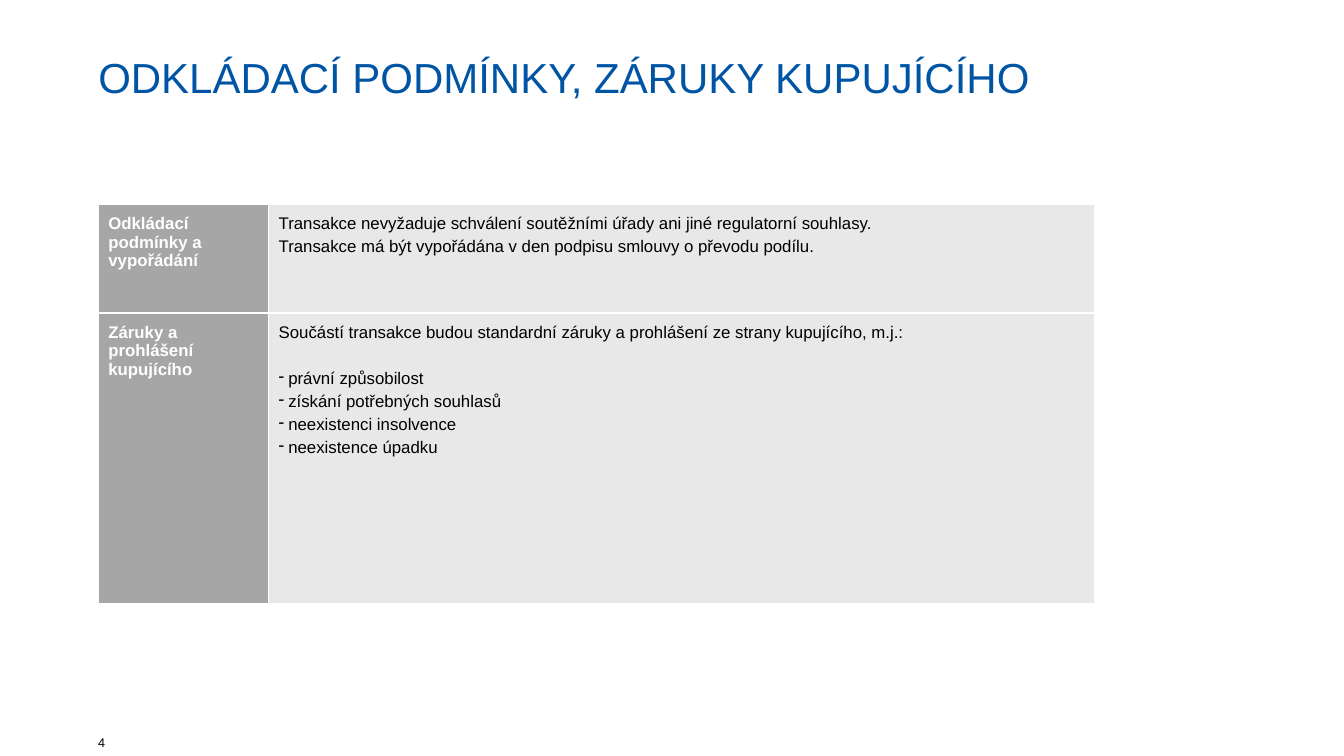
from lxml import etree
from pptx import Presentation
from pptx.dml.color import RGBColor
from pptx.enum.text import MSO_ANCHOR, MSO_AUTO_SIZE, PP_ALIGN
from pptx.oxml.ns import qn
from pptx.util import Inches, Pt

LEFT = PP_ALIGN.LEFT
JUSTIFY = PP_ALIGN.JUSTIFY
MIDDLE = MSO_ANCHOR.MIDDLE
TOP = MSO_ANCHOR.TOP
NO_AUTOFIT = MSO_AUTO_SIZE.NONE

TITLE = "ODKLÁDACÍ PODMÍNKY, ZÁRUKY KUPUJÍCÍHO"
PAGE_NUMBER = "4"
TERMS = [
    {
        "label": "Odkládací podmínky a vypořádání",
        "statements": [
            "Transakce nevyžaduje schválení soutěžními úřady ani jiné regulatorní souhlasy.",
            "Transakce má být vypořádána v den podpisu smlouvy o převodu podílu.",
        ],
        "bullets": [],
        "height": 2.16,
    },
    {
        "label": "Záruky a prohlášení kupujícího",
        "statements": [
            "Součástí transakce budou standardní záruky a prohlášení ze strany kupujícího, m.j.:",
        ],
        "bullets": [
            "právní způsobilost",
            "získání potřebných souhlasů",
            "neexistenci insolvence",
            "neexistence úpadku",
        ],
        "height": 5.76,
    },
]

COLORS = {
    "title": "0054A4",
    "text": "000000",
    "label_text": "FFFFFF",
    "label_fill": "A6A6A6",
    "terms_fill": "E8E8E8",
    "border": "FFFFFF",
}
FONT = "Arial"
MARGIN_LEFT = 1.95
TABLE_TOP = 4.05
COLUMN_WIDTHS = [3.38, 16.39]
CELL_MARGIN = 0.2
BULLET_INDENT = 0.19
TEXT_SIZE = 24
SPACING = 3
LIST_GAP = 36
OUTER_BORDER, ROW_BORDER = 1, 3


def format_paragraph(paragraph, size, color, bold=False, alignment=LEFT):
    paragraph.alignment = alignment
    for run in paragraph.runs:
        run.font.name = FONT
        run.font.size = Pt(size)
        run.font.bold = bold
        run.font.color.rgb = RGBColor.from_string(COLORS[color])


def fill_text_box(shape, text, size, color):
    frame = shape.text_frame
    frame.text = text
    frame.word_wrap = True
    frame.auto_size = NO_AUTOFIT
    frame.vertical_anchor = MIDDLE
    frame.margin_left = frame.margin_top = frame.margin_right = frame.margin_bottom = 0
    format_paragraph(frame.paragraphs[0], size, color)


def add_dash_bullet(paragraph):
    properties = paragraph._p.get_or_add_pPr()
    properties.set("marL", str(Inches(BULLET_INDENT)))
    properties.set("indent", str(-Inches(BULLET_INDENT)))
    etree.SubElement(properties, qn("a:buChar"), char="-")


def set_borders(cell, widths):
    properties = cell._tc.get_or_add_tcPr()
    for position, (side, width) in enumerate(widths.items()):
        line = etree.Element(qn(f"a:ln{side}"), w=str(Pt(width)))
        fill = etree.SubElement(line, qn("a:solidFill"))
        etree.SubElement(fill, qn("a:srgbClr"), val=COLORS["border"])
        properties.insert(position, line)


def fill_cell(cell, statements, bullets, fill, color, bold, alignment):
    cell.fill.solid()
    cell.fill.fore_color.rgb = RGBColor.from_string(COLORS[fill])
    cell.vertical_anchor = TOP
    cell.margin_left = cell.margin_top = Inches(CELL_MARGIN)
    cell.margin_right = cell.margin_bottom = Inches(CELL_MARGIN)
    frame = cell.text_frame
    for index, text in enumerate(statements + bullets):
        paragraph = frame.add_paragraph() if index else frame.paragraphs[0]
        paragraph.text = text
        if index >= len(statements):
            add_dash_bullet(paragraph)
        if index:
            paragraph.space_before = Pt(SPACING)
        ends_statements = bullets and index == len(statements) - 1
        paragraph.space_after = Pt(LIST_GAP if ends_statements else SPACING)
        format_paragraph(paragraph, TEXT_SIZE, color, bold, alignment)


def add_terms_table(slide):
    table = slide.shapes.add_table(
        len(TERMS), len(COLUMN_WIDTHS), Inches(MARGIN_LEFT), Inches(TABLE_TOP),
        Inches(sum(COLUMN_WIDTHS)), Inches(sum(term["height"] for term in TERMS)),
    ).table
    table.first_row = False
    table.horz_banding = False
    for column, width in zip(table.columns, COLUMN_WIDTHS):
        column.width = Inches(width)
    for index, (row, term) in enumerate(zip(table.rows, TERMS)):
        row.height = Inches(term["height"])
        label_cell, terms_cell = row.cells
        fill_cell(label_cell, [term["label"]], [], "label_fill", "label_text", True, LEFT)
        fill_cell(terms_cell, term["statements"], term["bullets"],
                  "terms_fill", "text", False, JUSTIFY)
        borders = {
            "L": OUTER_BORDER,
            "R": OUTER_BORDER,
            "T": ROW_BORDER if index else OUTER_BORDER,
            "B": ROW_BORDER if index < len(TERMS) - 1 else OUTER_BORDER,
        }
        for cell in row.cells:
            set_borders(cell, borders)


def main():
    presentation = Presentation()
    presentation.slide_width = Inches(26.67)
    presentation.slide_height = Inches(15)
    slide = presentation.slides.add_slide(presentation.slide_layouts[5])

    title = slide.shapes.title
    title.left, title.top = Inches(MARGIN_LEFT), Inches(0.36)
    title.width, title.height = Inches(19.25), Inches(2.32)
    fill_text_box(title, TITLE, 60, "title")

    page_number = slide.shapes.add_textbox(
        Inches(MARGIN_LEFT), Inches(14.47), Inches(2.76), Inches(0.53))
    fill_text_box(page_number, PAGE_NUMBER, 18, "text")

    add_terms_table(slide)
    presentation.save("out.pptx")


if __name__ == "__main__":
    main()
